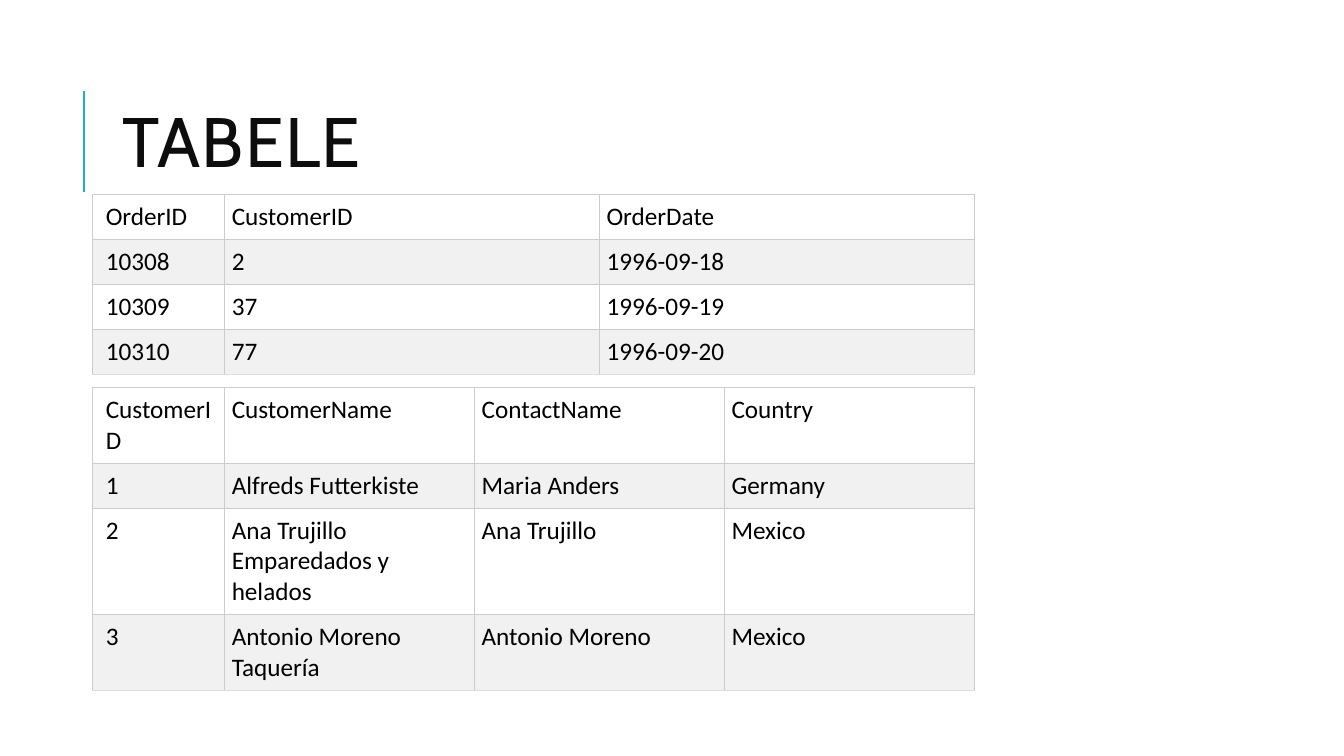
import pptx
import pptx.dml.color
import pptx.enum.shapes
import pptx.enum.text
import pptx.oxml.ns
import pptx.util
from lxml import etree

COLUMNS, ROWS = 160, 90
UNIT = pptx.util.Inches(7.5) // ROWS
PADDING = 0.85
LINE_ROWS = 3.66
KEY_COLUMN = 15.75

ORDERS = [
    ["OrderID", "CustomerID", "OrderDate"],
    ["10308", "2", "1996-09-18"],
    ["10309", "37", "1996-09-19"],
    ["10310", "77", "1996-09-20"],
]
CUSTOMERS = [
    ["CustomerID", "CustomerName", "ContactName", "Country"],
    ["1", "Alfreds Futterkiste", "Maria Anders", "Germany"],
    ["2", "Ana Trujillo Emparedados y helados", "Ana Trujillo", "Mexico"],
    ["3", "Antonio Moreno Taquería", "Antonio Moreno", "Mexico"],
]


def grid(units):
    return round(units * UNIT)


def color(value):
    return pptx.dml.color.RGBColor.from_string(value)


def style_font(font, name, size, value):
    font.name = name
    font.size = pptx.util.Pt(size)
    font.color.rgb = color(value)


def add_accent(slide, x, top, bottom):
    accent = slide.shapes.add_connector(
        pptx.enum.shapes.MSO_CONNECTOR.STRAIGHT,
        grid(x), grid(bottom), grid(x), grid(top))
    accent.line.color.rgb = color("1CADE4")
    accent.line.width = pptx.util.Pt(1.5)
    etree.SubElement(accent.element.spPr, pptx.oxml.ns.qn("a:effectLst"))


def add_heading(slide, text, left, top, width, height):
    frame = slide.shapes.add_textbox(
        grid(left), grid(top), grid(width), grid(height)).text_frame
    frame.word_wrap = True
    frame.vertical_anchor = pptx.enum.text.MSO_ANCHOR.MIDDLE
    heading = frame.paragraphs[0]
    heading.line_spacing = 0.8
    run = heading.add_run()
    run.text = text
    style_font(heading.font, "Cabin", 50, "0D0D0D")
    run.font._element.set("spc", "100")


def add_border(cell, side, value):
    qn = pptx.oxml.ns.qn
    properties = cell._tc.get_or_add_tcPr()
    border = etree.SubElement(properties, qn("a:" + side), w=str(pptx.util.Pt(0.6)))
    fill = etree.SubElement(border, qn("a:solidFill"))
    etree.SubElement(fill, qn("a:srgbClr"), val=value)


def fill_cell(cell, text, is_key, is_shaded, is_last):
    cell.text = text
    style_font(cell.text_frame.paragraphs[0].font, "Calibri", 18, "000000")
    cell.margin_left = grid(1.6 if is_key else PADDING)
    cell.margin_right = cell.margin_top = cell.margin_bottom = grid(PADDING)
    for side in ("lnL", "lnR", "lnT", "lnB"):
        add_border(cell, side, "DDDDDD" if is_last and side == "lnB" else "CCCCCC")
    cell.fill.solid()
    cell.fill.fore_color.rgb = color("F1F1F1" if is_shaded else "FFFFFF")


def add_records(slide, records, line_counts, left, top, width):
    heights = [2 * PADDING + LINE_ROWS * lines for lines in line_counts]
    field_count = len(records[0])
    table = slide.shapes.add_table(
        len(records), field_count,
        grid(left), grid(top), grid(width), grid(sum(heights))).table
    table.first_row = table.horz_banding = False
    field_width = (width - KEY_COLUMN) / (field_count - 1)
    for index, column in enumerate(table.columns):
        column.width = grid(field_width if index else KEY_COLUMN)
    for row_index, record in enumerate(records):
        table.rows[row_index].height = grid(heights[row_index])
        for field_index, text in enumerate(record):
            fill_cell(table.cell(row_index, field_index), text,
                      field_index == 0, row_index % 2 == 1,
                      row_index == len(records) - 1)


def main():
    deck = pptx.Presentation()
    deck.slide_width, deck.slide_height = grid(COLUMNS), grid(ROWS)
    slide = deck.slides.add_slide(deck.slide_layouts[6])
    add_accent(slide, 10, 10.8, 22.8)
    add_heading(slide, "TABELE", 13.4, 7.7, 127.6, 19.7)
    add_records(slide, ORDERS, [1, 1, 1, 1], 11, 23.15, 105)
    add_records(slide, CUSTOMERS, [2, 1, 3, 2], 11, 46.1, 105)
    deck.save("out.pptx")


if __name__ == "__main__":
    main()
